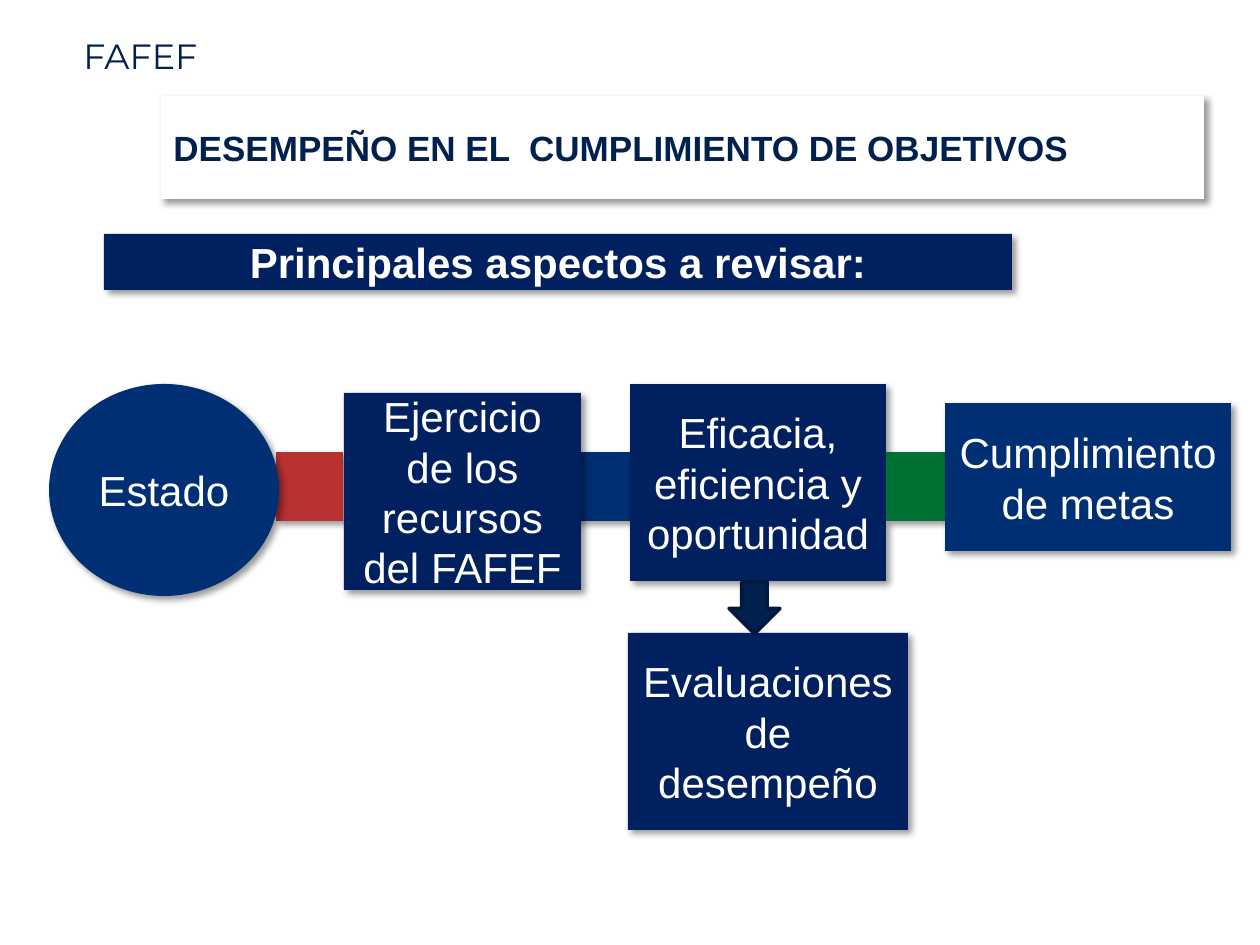
from lxml import etree
from pptx import Presentation
from pptx.dml.color import RGBColor
from pptx.enum.shapes import MSO_SHAPE as Shape
from pptx.enum.text import MSO_ANCHOR as Anchor, MSO_AUTO_SIZE as AutoSize, PP_ALIGN as Align
from pptx.oxml.ns import qn
from pptx.util import Emu, Pt

EMU_PER_PX = 914400 / 126
WHITE, INK, ARROW_EDGE = "FFFFFF", "00204E", "00183A"
NAVY, BLUE, RED, GREEN = "002060", "002F74", "B93131", "007033"
LINK_TOP, LINK_WIDTH, LINK_HEIGHT = 452, 67, 69


def px(length):
    return Emu(round(length * EMU_PER_PX))


def color(hex_string):
    return RGBColor.from_string(hex_string)


class SlideBuilder:
    def __init__(self, slide, font="Arial"):
        self.slide = slide
        self.font = font

    def set_text(self, text_frame, text, size, hex_color, align, bold=False, font=None):
        text_frame.text = text
        paragraph = text_frame.paragraphs[0]
        paragraph.alignment = align
        run_font = paragraph.runs[0].font
        run_font.name = font or self.font
        run_font.size = Pt(size)
        run_font.bold = bold
        run_font.color.rgb = color(hex_color)

    def shape(self, kind, box, fill):
        shape = self.slide.shapes.add_shape(kind, *map(px, box))
        shape.shadow.inherit = False
        shape.fill.solid()
        shape.fill.fore_color.rgb = color(fill)
        shape.line.fill.background()
        return shape

    def cast_shadow(self, shape):
        """Add a soft black shadow to the lower right."""
        effects = shape._element.spPr.find(qn("a:effectLst"))
        shadow = etree.SubElement(effects, qn("a:outerShdw"), blurRad=str(Pt(4)),
                                  dist=str(Pt(3)), dir="2700000", algn="tl", rotWithShape="0")
        black = etree.SubElement(shadow, qn("a:srgbClr"), val="000000")
        etree.SubElement(black, qn("a:alpha"), val="40000")

    def block(self, box, fill, text="", kind=Shape.RECTANGLE, size=24,
              text_color=WHITE, align=Align.CENTER, bold=False):
        shape = self.shape(kind, box, fill)
        self.cast_shadow(shape)
        if text:
            shape.text_frame.word_wrap = True
            shape.text_frame.vertical_anchor = Anchor.MIDDLE
            self.set_text(shape.text_frame, text, size, text_color, align, bold)

    def link(self, left, fill):
        """Add a coloured bar between two steps."""
        self.block((left, LINK_TOP, LINK_WIDTH, LINK_HEIGHT), fill)

    def label(self, box, text, size, hex_color, font):
        text_frame = self.slide.shapes.add_textbox(*map(px, box)).text_frame
        text_frame.word_wrap = False
        text_frame.auto_size = AutoSize.SHAPE_TO_FIT_TEXT
        self.set_text(text_frame, text, size, hex_color, Align.LEFT, font=font)

    def down_arrow(self, box, fill, edge):
        arrow = self.shape(Shape.DOWN_ARROW, box, fill)
        arrow.line.color.rgb = color(edge)
        arrow.line.width = Pt(2)


def main():
    presentation = Presentation()
    presentation.slide_width, presentation.slide_height = px(1260), px(945)
    builder = SlideBuilder(presentation.slides.add_slide(presentation.slide_layouts[6]))

    builder.block((161, 96, 1043, 103), WHITE, "DESEMPEÑO EN EL  CUMPLIMIENTO DE OBJETIVOS",
                  size=20, text_color=INK, align=Align.LEFT, bold=True)
    builder.label((71, 28, 146, 55), "FAFEF", 20, INK, "Montserrat")

    builder.link(571, BLUE)
    builder.link(276, RED)
    builder.block((49, 384, 230, 212), BLUE, "Estado", kind=Shape.OVAL)
    builder.block((344, 393, 237, 197), NAVY, "Ejercicio de los recursos del FAFEF")
    builder.block((630, 384, 256, 197), NAVY, "Eficacia, eficiencia y oportunidad")
    builder.link(886, GREEN)
    builder.block((945, 403, 286, 148), BLUE, "Cumplimiento de metas")

    builder.block((104, 234, 908, 56), NAVY, "Principales aspectos a revisar:", bold=True)
    builder.block((628, 633, 280, 197), NAVY, "Evaluaciones de desempeño")
    builder.down_arrow((729, 582, 51, 52), INK, ARROW_EDGE)

    presentation.save("out.pptx")


if __name__ == "__main__":
    main()
